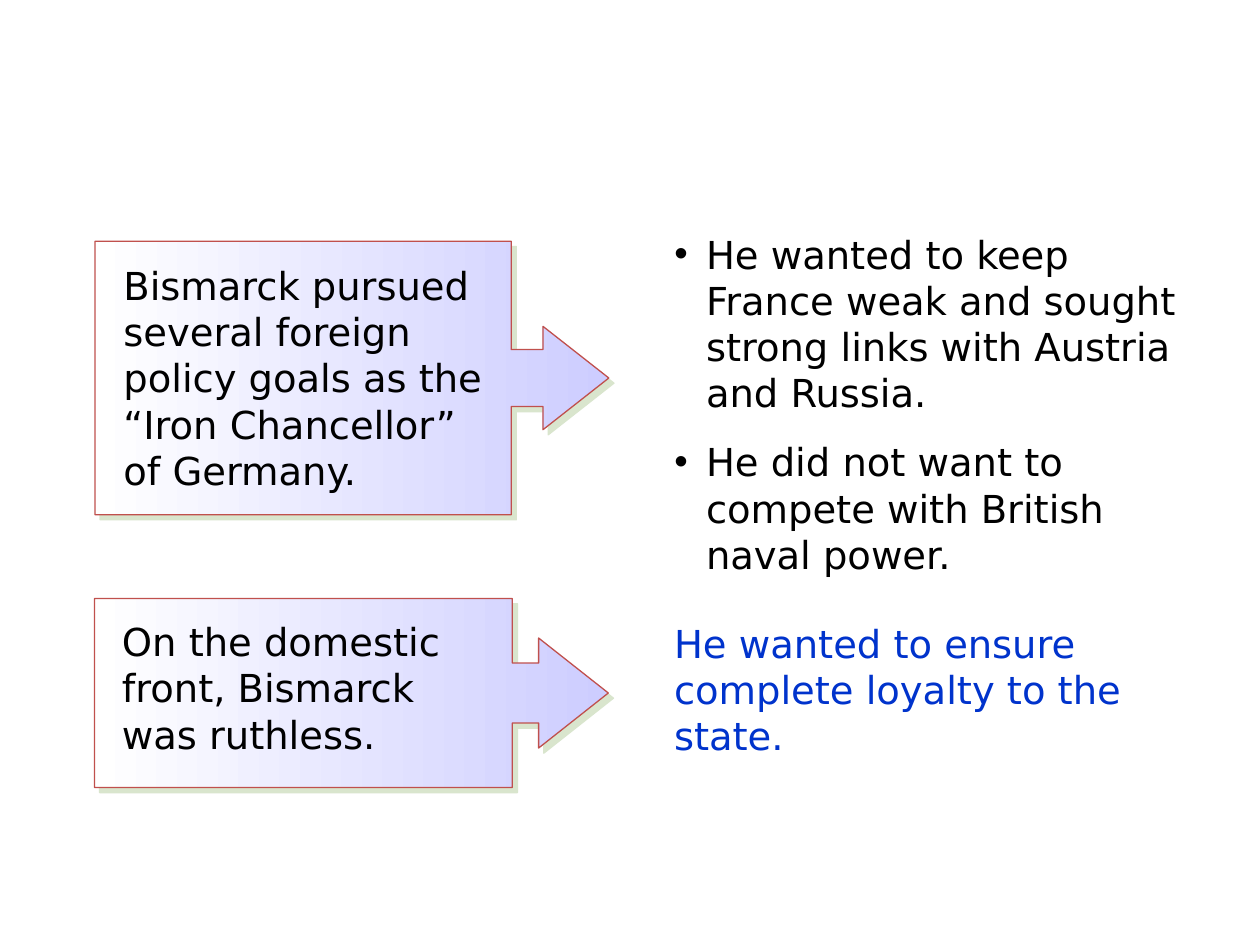
from lxml import etree
from pptx import Presentation, util as u
from pptx.dml.color import RGBColor
from pptx.enum import shapes, text
from pptx.oxml import parse_xml
from pptx.oxml.ns import nsdecls, qn

COLORS = {
    "ink": "000000",
    "accent": "0033CC",
    "tip": "CDCDFF",
    "tail": "FFFFFF",
    "outline": "C0504D",
    "shadow": "ADC793",
}


class SlideBuilder:
    font_name = "DejaVu Sans"
    font_size = u.Pt(22)

    def __init__(self, slide):
        self.slide = slide

    def color(self, name):
        return RGBColor.from_string(COLORS[name])

    def place(self, part, left, top, width, height):
        part.left, part.top = u.Cm(left), u.Cm(top)
        part.width, part.height = u.Cm(width), u.Cm(height)

    def set_text(self, part, lines, color):
        frame = part.text_frame
        frame.text = "\n".join(lines)
        frame.word_wrap = True
        frame.auto_size = text.MSO_AUTO_SIZE.SHAPE_TO_FIT_TEXT
        frame.vertical_anchor = text.MSO_ANCHOR.TOP
        for paragraph in frame.paragraphs:
            paragraph.font.name = self.font_name
            paragraph.font.size = self.font_size
            paragraph.font.color.rgb = self.color(color)
        return frame.paragraphs

    def statement(self, box, words, color="ink"):
        part = self.slide.shapes.add_textbox(0, 0, 0, 0)
        self.place(part, *box)
        self.set_text(part, [words], color)

    def bullets(self, box, items):
        body = self.slide.placeholders[1]
        self.place(body, *box)
        for paragraph in self.set_text(body, items, "ink"):
            paragraph.space_before = u.Pt(0)
            paragraph.space_after = u.Pt(13.2)
            properties = paragraph._p.get_or_add_pPr()
            properties.set("marL", str(u.Cm(0.64)))
            properties.set("indent", str(u.Cm(-0.64)))
            bullet = parse_xml(f'<a:buChar {nsdecls("a")} char="•"/>')
            properties.find(qn("a:spcAft")).addnext(bullet)

    def callout(self, box, adjustments):
        part = self.slide.shapes.add_shape(
            shapes.MSO_SHAPE.UP_ARROW_CALLOUT, 0, 0, 0, 0)
        self.place(part, *box)
        part.rotation = 90
        part._element.spPr.find(qn("a:xfrm")).set("flipH", "1")
        for index, value in enumerate(adjustments):
            part.adjustments[index] = value
        part.fill.gradient()
        part.fill.gradient_angle = 270
        for stop, name in zip(part.fill.gradient_stops, ("tip", "tail")):
            stop.color.rgb = self.color(name)
        part.line.color.rgb = self.color("outline")
        part.line.width = u.Pt(0.75)
        self.cast_shadow(part)

    def cast_shadow(self, part):
        part.shadow.inherit = False
        effects = part._element.spPr.find(qn("a:effectLst"))
        shadow = etree.SubElement(
            effects, qn("a:outerShdw"), dist=str(u.Pt(4.2)),
            dir="2700000", algn="ctr", rotWithShape="0")
        tint = etree.SubElement(shadow, qn("a:srgbClr"), val=COLORS["shadow"])
        etree.SubElement(tint, qn("a:alpha"), val="46000")


def main():
    deck = Presentation()
    deck.slide_width, deck.slide_height = u.Cm(25.4), u.Cm(19.05)
    slide = deck.slides.add_slide(deck.slide_layouts[1])
    title = slide.shapes.title._element
    title.getparent().remove(title)

    builder = SlideBuilder(slide)
    builder.callout((4.34, 2.44, 5.51, 10.36), (0.208, 0.189, 0.241, 0.81))
    builder.bullets((13.34, 4.52, 11, 8), [
        "He wanted to keep France weak and sought strong links "
        "with Austria and Russia.",
        "He did not want to compete with British naval power.",
    ])
    builder.statement((13.34, 12.37, 11.43, 3.1),
                      "He wanted to ensure complete loyalty to the state.",
                      "accent")
    builder.callout((5.18, 8.79, 3.81, 10.36), (0.317, 0.291, 0.369, 0.813))
    builder.statement((2.21, 12.34, 8.69, 3.1),
                      "On the domestic \vfront, Bismarck \vwas ruthless.")
    builder.statement((2.24, 5.16, 9.19, 4.98),
                      "Bismarck pursued several foreign \v"
                      "policy goals as the “Iron Chancellor” \vof Germany.")
    deck.save("out.pptx")


if __name__ == "__main__":
    main()
